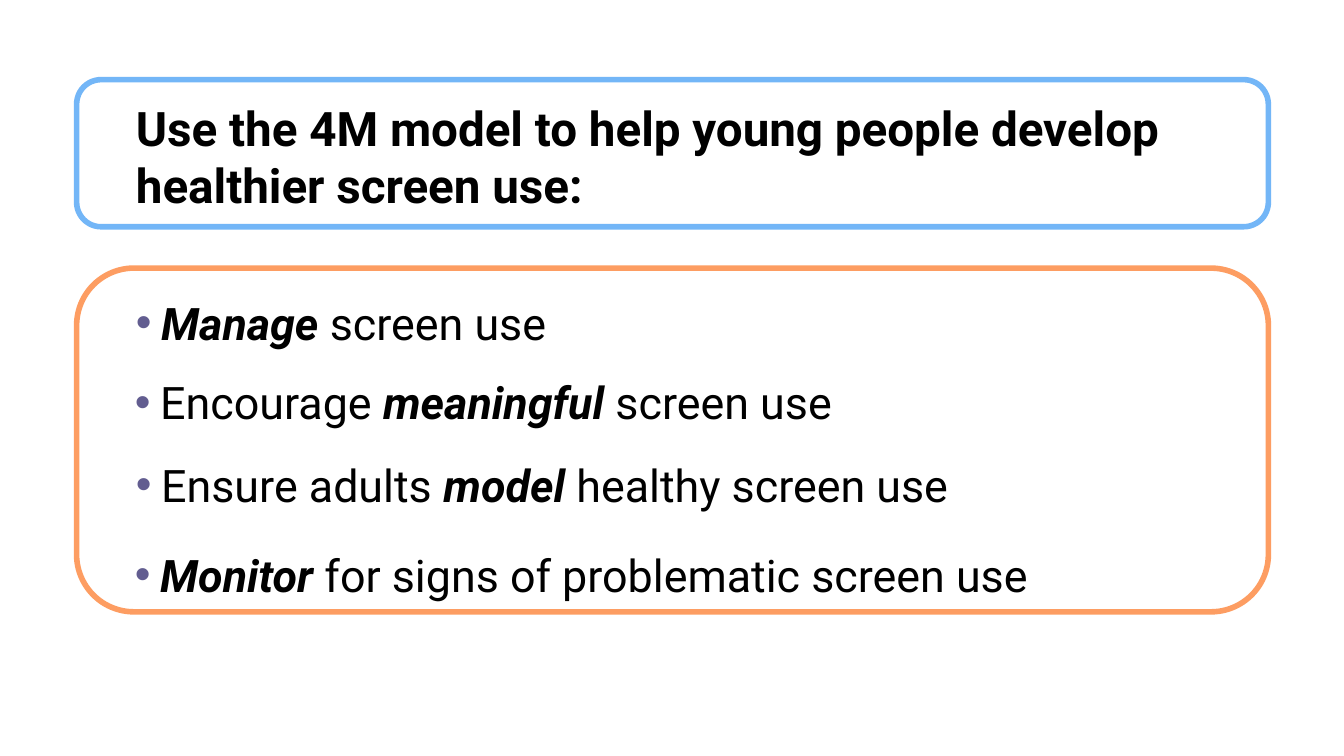
from dataclasses import dataclass

from lxml.etree import SubElement
from pptx import Presentation
from pptx.dml.color import RGBColor
from pptx.enum.shapes import MSO_SHAPE
from pptx.oxml.ns import qn
from pptx.util import Emu, Pt

PX = 9144


@dataclass(frozen=True)
class Theme:
    font: str = "Roboto"
    text: str = "000000"
    bullet: str = "625D90"
    heading_frame: str = "73B6F7"
    list_frame: str = "FD9D62"
    heading_size: int = 34
    list_size: int = 32
    frame_width: int = 4


THEME = Theme()

STRATEGIES = [
    ((125, 288, 1118, 88), 1.0, [("Manage", True), (" screen use", False)]),
    ((124, 367, 1118, 61), 1.0,
     [("Encourage ", False), ("meaningful", True), (" screen use", False)]),
    ((125, 449, 1118, 80), 1.0,
     [("Ensure adults ", False), ("model", True), (" healthy screen use", False)]),
    ((124, 506, 1118, 106), 1.6,
     [("Monitor", True), (" for signs of problematic screen use", False)]),
]


def px(*lengths):
    """Turn px lengths into EMU."""
    return [Emu(length * PX) for length in lengths]


def add_frame(slide, box, color):
    """Add an unfilled rounded outline."""
    shape = slide.shapes.add_shape(MSO_SHAPE.ROUNDED_RECTANGLE, *px(*box))
    shape.shadow.inherit = False
    shape.fill.background()
    shape.line.color.rgb = RGBColor.from_string(color)
    shape.line.width = Pt(THEME.frame_width)


def add_paragraph_box(slide, box):
    """Add a wrapping text box and return its paragraph."""
    text_frame = slide.shapes.add_textbox(*px(*box)).text_frame
    text_frame.word_wrap = True
    return text_frame.paragraphs[0]


def add_run(paragraph, text, size, bold=False, italic=False):
    """Append a run in the theme font."""
    run = paragraph.add_run()
    run.text = text
    run.font.name = THEME.font
    run.font.size = Pt(size)
    run.font.bold = bold
    run.font.italic = italic
    run.font.color.rgb = RGBColor.from_string(THEME.text)


def set_bullet(paragraph):
    """Give a paragraph a coloured bullet with a hanging indent."""
    properties = paragraph._p.get_or_add_pPr()
    indent = 25 * PX
    properties.set("marL", str(indent))
    properties.set("indent", str(-indent))
    color = SubElement(properties, qn("a:buClr"))
    SubElement(color, qn("a:srgbClr"), val=THEME.bullet)
    SubElement(properties, qn("a:buFont"), typeface="Arial")
    SubElement(properties, qn("a:buChar"), char="•")


def add_strategy(slide, box, line_spacing, parts):
    """Add one bulleted strategy with its key word emphasised."""
    paragraph = add_paragraph_box(slide, box)
    set_bullet(paragraph)
    paragraph.line_spacing = line_spacing
    for text, emphasised in parts:
        add_run(paragraph, text, THEME.list_size, emphasised, emphasised)


def main():
    """Build and save the slide."""
    presentation = Presentation()
    presentation.slide_width, presentation.slide_height = px(1333, 750)
    slide = presentation.slides.add_slide(presentation.slide_layouts[6])
    add_frame(slide, (76, 79, 1182, 146), THEME.heading_frame)
    add_frame(slide, (76, 266, 1182, 341), THEME.list_frame)
    heading = add_paragraph_box(slide, (125, 93, 1084, 125))
    add_run(heading, "Use the 4M model to help young people develop healthier screen use:",
            THEME.heading_size, bold=True)
    for box, line_spacing, parts in STRATEGIES:
        add_strategy(slide, box, line_spacing, parts)
    presentation.save("out.pptx")


if __name__ == "__main__":
    main()
